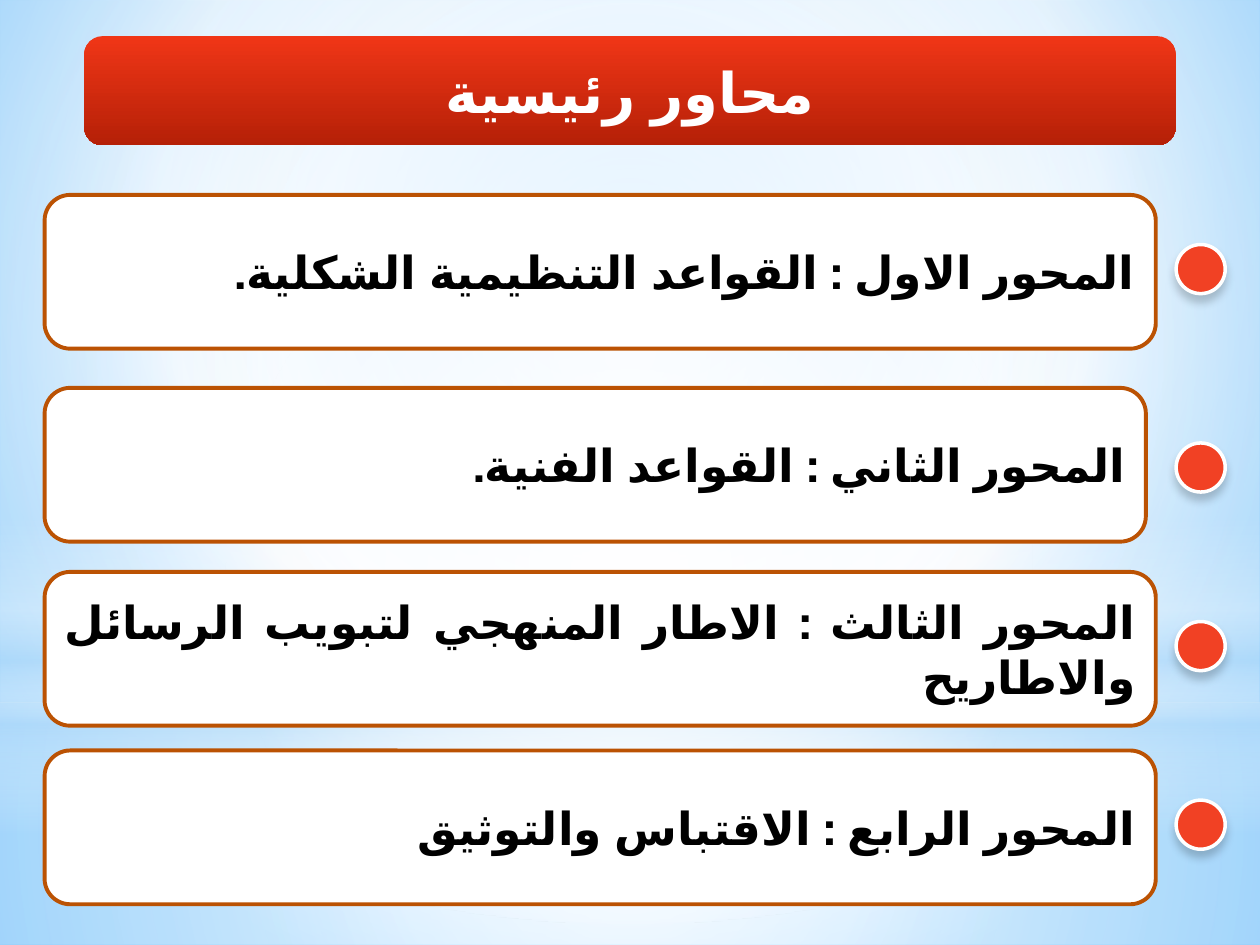
import pptx
import pptx.util
import pptx.dml.color
import pptx.enum.lang
import pptx.enum.shapes
import pptx.enum.text
import pptx.oxml
import pptx.oxml.ns
from lxml import etree

Cm, Pt = pptx.util.Cm, pptx.util.Pt
SHAPE = pptx.enum.shapes.MSO_SHAPE
ALIGN = pptx.enum.text.PP_ALIGN
qn = pptx.oxml.ns.qn

# Content: text, box top, box width, dot top (cm)
HEADING = "محاور رئيسية"
HEADING_BOX = (1.7, 0.73, 22, 2.2)
TOPICS = [
    ("المحور الاول : القواعد التنظيمية الشكلية.", 3.93, 22.4, 4.93),
    ("المحور الثاني : القواعد الفنية.", 7.82, 22.2, 8.93),
    ("المحور الثالث : الاطار المنهجي لتبويب الرسائل والاطاريح", 11.53, 22.4, 12.53),
    ("المحور الرابع : الاقتباس والتوثيق", 15.13, 22.4, 16.13),
]

THEME = {
    "font": "Times New Roman", "heading_size": 32, "topic_size": 26,
    "light": "FFFFFF", "text": "000000", "border": "BB5203", "dot": "F14124",
    "heading_fill": [(0, "F03617", 100), (100, "B52007", 100)],
    "sky": [(0, "9ED5FF", 100), (60, "FFFFFF", 100), (100, "5BB9FF", 100)],
}
CENTRE = (50, 50, 50, 50)
# Backdrop: shape, position (cm), stops (place, colour, opacity), direction
BACKDROP = [
    (SHAPE.RECTANGLE, (0, 14.17, 25.4, 4.88),
     [(0, "FFFFFF", 91), (37, "FFFFFF", 76), (100, "B4DCFA", 79)], {"focus": CENTRE}),
    (SHAPE.RECTANGLE, (0, 0, 25.4, 14.17),
     [(0, "FFFFFF", 89), (48, "FFFFFF", 62), (100, "B4DCFA", 79)], {"focus": CENTRE}),
    (SHAPE.RECTANGLE, (0, 10.46, 25.4, 6.35),
     [(0, "FFFFFF", 0), (29, "FFFFFF", 30), (45, "B4DCFA", 40),
      (55, "FFFFFF", 26), (65, "B4DCFA", 60), (100, "FFFFFF", 0)], {"angle": 90}),
    (SHAPE.OVAL, (0, 4.45, 25.4, 14.17),
     [(0, "FFFFFF", 100), (56, "FFFFFF", 0)], {"focus": CENTRE}),
]


def rgb(code):
    return pptx.dml.color.RGBColor.from_string(code)


def add_child(parent, tag, **attributes):
    child = etree.SubElement(parent, qn(tag))
    for key, value in attributes.items():
        child.set(key, str(value))
    return child


def add_colour(parent, code, opacity):
    colour = add_child(parent, "a:srgbClr", val=code)
    if opacity < 100:
        add_child(colour, "a:alpha", val=opacity * 1000)


def set_gradient(owner, fill, stops, angle=None, focus=None):
    fill.gradient()
    gradient = owner.element.find(".//" + qn("a:gradFill"))
    for child in list(gradient):
        gradient.remove(child)
    stop_list = add_child(gradient, "a:gsLst")
    for place, code, opacity in stops:
        add_colour(add_child(stop_list, "a:gs", pos=place * 1000), code, opacity)
    if focus:
        circle = add_child(gradient, "a:path", path="circle")
        edges = {side: share * 1000 for side, share in zip("ltrb", focus)}
        add_child(circle, "a:fillToRect", **edges)
    else:
        add_child(gradient, "a:lin", ang=angle * 60000, scaled=0)


def place(shape, left, top, width, height):
    shape.left, shape.top, shape.width, shape.height = map(Cm, (left, top, width, height))


def add_shape(slide, kind, box, fill=None, line=None, line_width=0):
    shape = slide.shapes.add_shape(kind, *map(Cm, box))
    shape.shadow.inherit = False
    if fill:
        shape.fill.solid()
        shape.fill.fore_color.rgb = rgb(fill)
    if line:
        shape.line.color.rgb = rgb(line)
        shape.line.width = Pt(line_width)
    else:
        shape.line.fill.background()
    return shape


def write_text(shape, text, size, colour, align):
    frame = shape.text_frame
    frame.word_wrap = True
    frame.auto_size = pptx.enum.text.MSO_AUTO_SIZE.NONE
    frame.vertical_anchor = pptx.enum.text.MSO_ANCHOR.MIDDLE
    paragraph = frame.paragraphs[0]
    paragraph.alignment = align
    paragraph._p.get_or_add_pPr().set("rtl", "1")
    run = paragraph.add_run()
    run.text = text
    run.font.size, run.font.bold = Pt(size), True
    run.font.color.rgb = rgb(colour)
    run.font.name = THEME["font"]
    run.font.language_id = pptx.enum.lang.MSO_LANGUAGE_ID.ARABIC_IRAQ


def add_soft_shadow(shape):
    effects = shape.element.spPr.find(qn("a:effectLst"))
    shadow = add_child(effects, "a:outerShdw", blurRad=Pt(5), dist=Pt(4),
                       dir=90 * 60000, algn="ctr", rotWithShape=0)
    add_colour(shadow, "000000", 20)


def main():
    prs = pptx.Presentation()
    prs.slide_width, prs.slide_height = Cm(25.4), Cm(19.05)
    slide = prs.slides.add_slide(prs.slide_layouts[5])

    # Background and backdrop
    set_gradient(slide, slide.background.fill, THEME["sky"], focus=(20, 10, 20, 60))
    for kind, box, stops, direction in BACKDROP:
        panel = add_shape(slide, kind, box)
        set_gradient(panel, panel.fill, stops, **direction)

    # Rounded banner with the heading in front of it
    banner = add_shape(slide, SHAPE.ROUNDED_RECTANGLE, HEADING_BOX)
    set_gradient(banner, banner.fill, THEME["heading_fill"], angle=90)
    heading = slide.shapes.title
    place(heading, *HEADING_BOX)
    write_text(heading, HEADING, THEME["heading_size"], THEME["light"], ALIGN.CENTER)
    slide.shapes.element.append(heading.element)

    # Topic boxes with their dots
    for text, top, width, dot_top in TOPICS:
        topic = add_shape(slide, SHAPE.ROUNDED_RECTANGLE, (0.9, top, width, 3.1),
                          THEME["light"], THEME["border"], 2.25)
        write_text(topic, text, THEME["topic_size"], THEME["text"], ALIGN.JUSTIFY)
        dot = add_shape(slide, SHAPE.OVAL, (23.71, dot_top, 0.99, 0.99),
                        THEME["dot"], THEME["light"], 2)
        add_soft_shadow(dot)

    prs.save("out.pptx")


if __name__ == "__main__":
    main()
